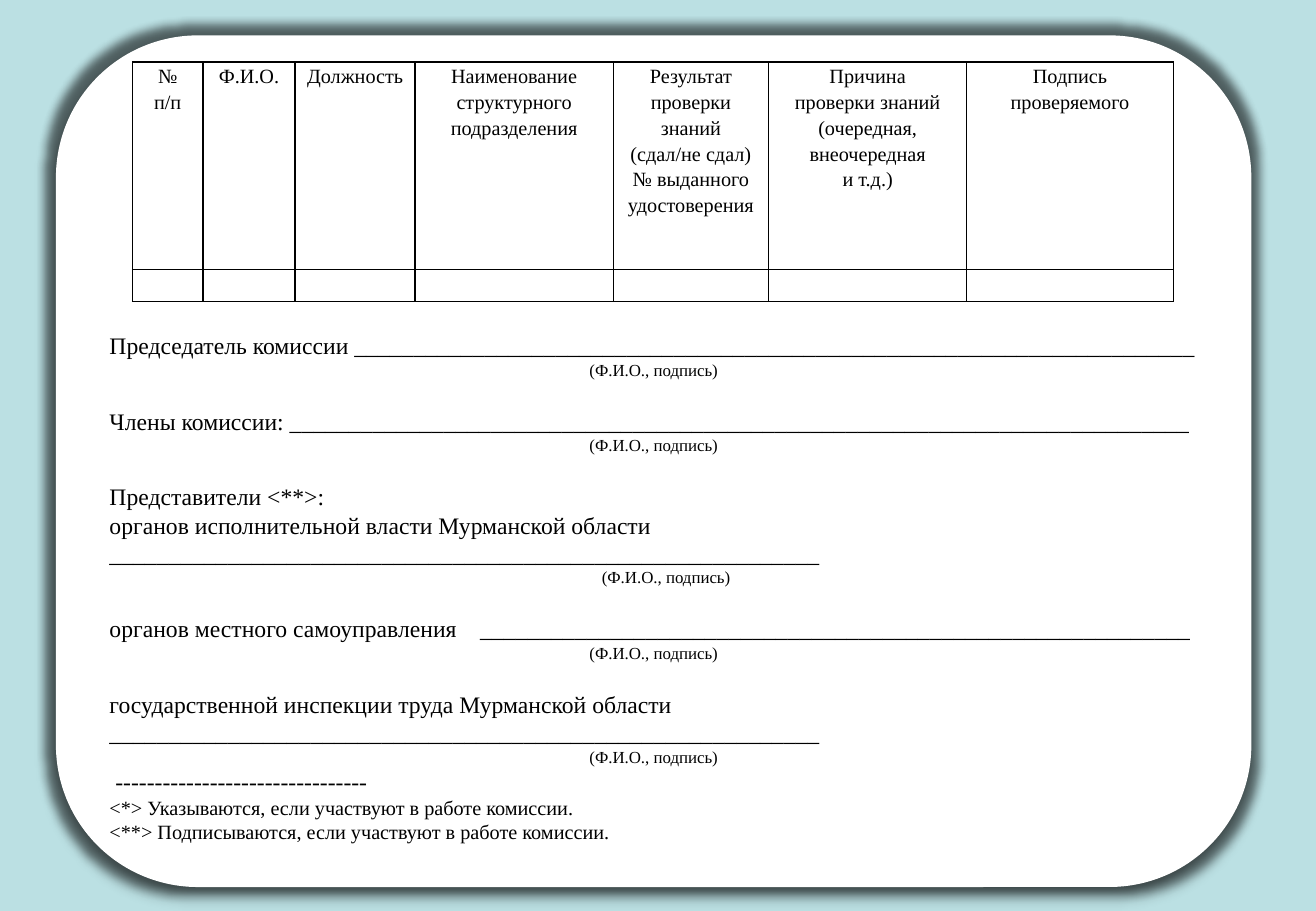
"""Build the signature page of a knowledge-check protocol."""
from dataclasses import dataclass

from lxml import etree
from pptx import Presentation
from pptx.dml.color import RGBColor
from pptx.enum.shapes import MSO_SHAPE
from pptx.enum.text import MSO_ANCHOR, PP_ALIGN
from pptx.oxml.ns import qn
from pptx.util import Cm, Pt

ROUNDED = MSO_SHAPE.ROUNDED_RECTANGLE
TOP = MSO_ANCHOR.TOP
LEFT, CENTER = PP_ALIGN.LEFT, PP_ALIGN.CENTER
FONT = "Times New Roman"
BLACK, WHITE, PALE_BLUE = "000000", "FFFFFF", "BBE0E3"
SIGN = "(Ф.И.О., подпись)"
BLANK = "_" * 60


@dataclass
class Line:
    text: str
    size: float = 14
    align: PP_ALIGN = LEFT
    before: float = 0
    indent: float = 0
    tab: float = 0


@dataclass
class Column:
    header: str
    width: float


LINES = [
    Line("Председатель комиссии " + "_" * 71),
    Line(SIGN, 10, CENTER),
    Line("Члены комиссии: " + "_" * 76, before=16),
    Line(SIGN, 10, CENTER),
    Line("Представители <**>:", before=16),
    Line("органов исполнительной власти Мурманской области " + BLANK),
    Line(SIGN, 10, CENTER, indent=0.52),
    Line("органов местного самоуправления\t" + BLANK, before=16, tab=7.75),
    Line(SIGN, 10, CENTER),
    Line("государственной инспекции труда Мурманской области " + BLANK, before=16),
    Line(SIGN, 10, CENTER),
    Line(" " + "-" * 32),
    Line("<*> Указываются, если участвуют в работе комиссии.", 12),
    Line("<**> Подписываются, если участвуют в работе комиссии.", 12),
]

COLUMNS = [
    Column("№\nп/п", 1.47),
    Column("Ф.И.О.", 1.93),
    Column("Должность", 2.51),
    Column("Наименование структурного\nподразделения", 4.14),
    Column("Результат\nпроверки\nзнаний\n(сдал/не сдал)\n№ выданного\nудостоверения", 3.25),
    Column("Причина\nпроверки знаний\n(очередная,\nвнеочередная\nи т.д.)", 4.14),
    Column("Подпись\nпроверяемого", 4.32),
]
ROW_HEIGHTS = [4.34, 0.66]


def rgb(color: str) -> RGBColor:
    return RGBColor.from_string(color)


def add_xml(parent, tag: str, **attrs):
    return etree.SubElement(parent, qn(tag), {k: str(v) for k, v in attrs.items()})


def add_color(parent, color: str, alpha: int = 100) -> None:
    clr = add_xml(parent, "a:srgbClr", val=color)
    if alpha < 100:
        add_xml(clr, "a:alpha", val=alpha * 1000)


def set_font(p, size: float) -> None:
    p.font.name = FONT
    p.font.size = Pt(size)
    p.font.color.rgb = rgb(BLACK)


def add_halo(sp) -> None:
    sp.shadow.inherit = False
    effects = sp._element.spPr.find(qn("a:effectLst"))
    add_color(add_xml(effects, "a:glow", rad=Pt(11)), BLACK, 50)
    shadow = add_xml(effects, "a:outerShdw", blurRad=Pt(3.5), dist=Pt(2.2),
                     dir=90 * 60000, algn="ctr", rotWithShape=0)
    add_color(shadow, BLACK, 32)


def write_line(p, line: Line) -> None:
    pPr = p._p.get_or_add_pPr()
    if line.indent:
        pPr.set("marL", str(Cm(line.indent)))
    if line.tab:
        add_xml(add_xml(pPr, "a:tabLst"), "a:tab", pos=Cm(line.tab), algn="l")
    p.text = line.text
    p.alignment = line.align
    p.space_before = Pt(line.before)
    set_font(p, line.size)


def add_form(s) -> None:
    sp = s.shapes.add_shape(ROUNDED, Cm(1.17), Cm(0.74), Cm(24.99), Cm(17.81))
    sp.fill.solid()
    sp.fill.fore_color.rgb = rgb(WHITE)
    sp.line.fill.background()
    add_halo(sp)
    tf = sp.text_frame
    tf.word_wrap = True
    tf.vertical_anchor = TOP
    tf.margin_top = Cm(5.31)
    for i, line in enumerate(LINES):
        write_line(tf.add_paragraph() if i else tf.paragraphs[0], line)


def format_cell(cell, text: str) -> None:
    cell.margin_left = cell.margin_right = Cm(0.13)
    cell.margin_top = cell.margin_bottom = 0
    cell.text = text
    for p in cell.text_frame.paragraphs:
        p.alignment = CENTER
        p.line_spacing = 1.15
        set_font(p, 12)
    tcPr = cell._tc.get_or_add_tcPr()
    for side in ("a:lnL", "a:lnR", "a:lnT", "a:lnB"):
        add_color(add_xml(add_xml(tcPr, side, w=Pt(1)), "a:solidFill"), BLACK)
    cell.fill.background()


def add_results_table(s) -> None:
    width = sum(column.width for column in COLUMNS)
    table = s.shapes.add_table(len(ROW_HEIGHTS), len(COLUMNS), Cm(2.77), Cm(1.3),
                               Cm(width), Cm(sum(ROW_HEIGHTS))).table
    table.first_row = table.horz_banding = False
    for row, height in zip(table.rows, ROW_HEIGHTS):
        row.height = Cm(height)
    for i, column in enumerate(COLUMNS):
        table.columns[i].width = Cm(column.width)
        format_cell(table.cell(0, i), column.header)
        format_cell(table.cell(1, i), "")


def main() -> None:
    prs = Presentation()
    prs.slide_width, prs.slide_height = Cm(27.51), Cm(19.05)
    s = prs.slides.add_slide(prs.slide_layouts[6])
    s.background.fill.solid()
    s.background.fill.fore_color.rgb = rgb(PALE_BLUE)
    add_form(s)
    add_results_table(s)
    prs.save("out.pptx")


if __name__ == "__main__":
    main()
